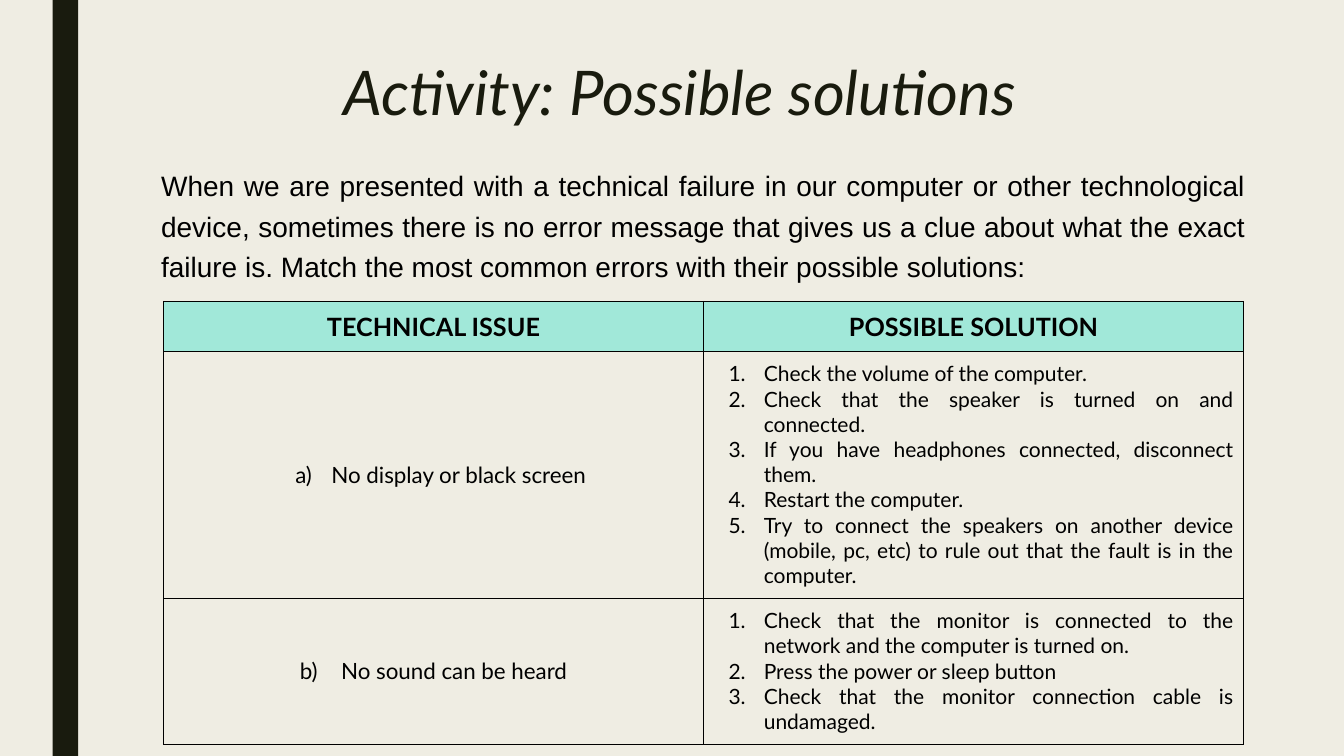
from lxml.etree import SubElement
from pptx import Presentation
from pptx.dml.color import RGBColor
from pptx.enum.shapes import MSO_SHAPE
from pptx.enum.text import MSO_ANCHOR, PP_ALIGN
from pptx.oxml.ns import qn
from pptx.util import Cm, Pt

CREAM = RGBColor(0xEF, 0xED, 0xE3)
DARK = RGBColor(0x19, 0x1B, 0x0E)
MINT = RGBColor(0xA1, 0xE8, 0xD9)
BLACK = RGBColor(0, 0, 0)

HEADERS = ["TECHNICAL ISSUE", "POSSIBLE SOLUTION"]
ISSUES = [
    ("No display or black screen", 1.27, 0.91, [
        "Check the volume of the computer.",
        "Check that the speaker is turned on and connected.",
        "If you have headphones connected, disconnect them.",
        "Restart the computer.",
        "Try to connect the speakers on another device (mobile, pc, etc) "
        "to rule out that the fault is in the computer.",
    ]),
    ("No sound can be heard", 1.04, 1.04, [
        "Check that the monitor is connected to the network and the computer is turned on.",
        "Press the power or sleep button",
        "Check that the monitor connection cable is undamaged.",
    ]),
]


def write(paragraph, text, size, alignment, font_name="Lato", color=BLACK, bold=False, italic=False):
    paragraph.text = text
    paragraph.alignment = alignment
    font = paragraph.runs[0].font
    font.name = font_name
    font.size = Pt(size)
    font.bold = bold
    font.italic = italic
    font.color.rgb = color


def number(paragraph, scheme, margin, hanging, start=1):
    properties = paragraph._p.get_or_add_pPr()
    properties.set("marL", str(Cm(margin)))
    properties.set("indent", str(-Cm(hanging)))
    bullet_color = SubElement(properties, qn("a:buClr"))
    SubElement(bullet_color, qn("a:srgbClr"), val=str(BLACK))
    SubElement(properties, qn("a:buFont"), typeface="Lato")
    SubElement(properties, qn("a:buAutoNum"), type=scheme, startAt=str(start))


presentation = Presentation()
presentation.slide_width = Cm(33.87)
presentation.slide_height = Cm(19.05)
slide = presentation.slides.add_slide(presentation.slide_layouts[6])
slide.background.fill.solid()
slide.background.fill.fore_color.rgb = CREAM

side_bar = slide.shapes.add_shape(MSO_SHAPE.RECTANGLE, Cm(1.33), 0, Cm(0.64), presentation.slide_height)
side_bar.shadow.inherit = False
side_bar.fill.solid()
side_bar.fill.fore_color.rgb = DARK
side_bar.line.fill.background()

title = slide.shapes.add_textbox(Cm(3.81), Cm(1.47), Cm(26.67), Cm(4.11))
title.text_frame.word_wrap = True
heading = title.text_frame.paragraphs[0]
heading.line_spacing = 0.89
write(heading, "Activity: Possible solutions", 44, PP_ALIGN.CENTER, color=DARK, italic=True)

introduction = slide.shapes.add_textbox(Cm(3.81), Cm(3.96), Cm(27.84), Cm(12.95))
introduction.text_frame.word_wrap = True
instructions = introduction.text_frame.paragraphs[0]
instructions.line_spacing = 1.2
write(
    instructions,
    "When we are presented with a technical failure in our computer or other technological device, "
    "sometimes there is no error message that gives us a clue about what the exact failure is. "
    "Match the most common errors with their possible solutions:",
    20, PP_ALIGN.JUSTIFY, font_name="Arial",
)

table = slide.shapes.add_table(3, 2, Cm(4.12), Cm(7.59), Cm(27.22), Cm(11.16)).table
for column in table.columns:
    column.width = Cm(13.61)
for row, height in zip(table.rows, (1.26, 6.22, 3.68)):
    row.height = Cm(height)

for cell in table.iter_cells():
    cell.margin_left = cell.margin_right = cell.margin_top = cell.margin_bottom = Cm(0.25)
    properties = cell._tc.get_or_add_tcPr()
    for side in ("lnL", "lnR", "lnT", "lnB"):
        border = SubElement(properties, qn(f"a:{side}"), w=str(Pt(0.75)))
        border_fill = SubElement(border, qn("a:solidFill"))
        SubElement(border_fill, qn("a:srgbClr"), val=str(BLACK))
    cell.fill.background()

for column_index, header in enumerate(HEADERS):
    cell = table.cell(0, column_index)
    cell.fill.solid()
    cell.fill.fore_color.rgb = MINT
    write(cell.text_frame.paragraphs[0], header, 18, PP_ALIGN.CENTER, bold=True)

for row_index, (issue, margin, hanging, solutions) in enumerate(ISSUES, start=1):
    issue_cell = table.cell(row_index, 0)
    issue_cell.vertical_anchor = MSO_ANCHOR.MIDDLE
    paragraph = issue_cell.text_frame.paragraphs[0]
    number(paragraph, "alphaLcParenR", margin, hanging, row_index)
    write(paragraph, issue, 16, PP_ALIGN.CENTER)

    solution_frame = table.cell(row_index, 1).text_frame
    for index, solution in enumerate(solutions):
        paragraph = solution_frame.add_paragraph() if index else solution_frame.paragraphs[0]
        number(paragraph, "arabicPeriod", 1.27, 0.89)
        write(paragraph, solution, 15, PP_ALIGN.JUSTIFY)

presentation.save("out.pptx")
